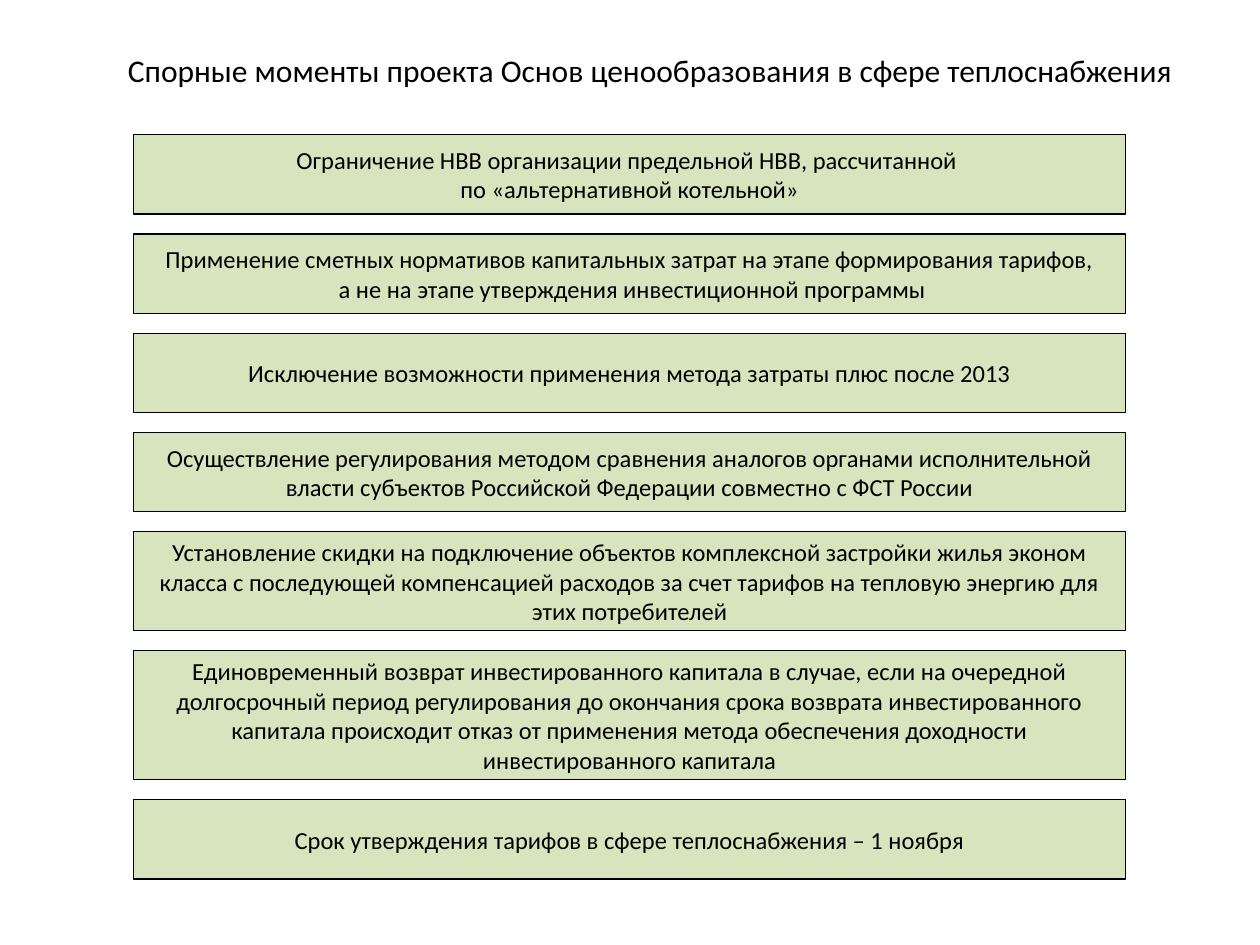
from dataclasses import dataclass

from pptx import Presentation
from pptx.dml.color import RGBColor
from pptx.enum.shapes import MSO_SHAPE
from pptx.enum.text import MSO_ANCHOR, MSO_AUTO_SIZE, PP_ALIGN
from pptx.util import Inches, Pt

RECT = MSO_SHAPE.RECTANGLE
MIDDLE, TOP = MSO_ANCHOR.MIDDLE, MSO_ANCHOR.TOP
CENTER = PP_ALIGN.CENTER
FIT_SHAPE = MSO_AUTO_SIZE.SHAPE_TO_FIT_TEXT

WIDTH, HEIGHT = 10, 7.5
UNIT = HEIGHT * 2.1 / 100
LEFT, FIRST_TOP = 1.06, 1.07
COLUMNS, GAP_ROWS = 50, 1


@dataclass(frozen=True)
class Theme:
    """Colours, font and type sizes of the slide."""
    font: str = "Calibri"
    ink: RGBColor = RGBColor(0x00, 0x00, 0x00)
    box: RGBColor = RGBColor(0xD7, 0xE4, 0xBD)
    title: int = 18
    body: int = 14
    line: float = 0.75


THEME = Theme()

TITLE = "Спорные моменты проекта Основ ценообразования в сфере теплоснабжения"
ISSUES = [
    (4, "Ограничение НВВ организации предельной НВВ, рассчитанной \n"
        "по «альтернативной котельной»"),
    (4, "Применение сметных нормативов капитальных затрат на этапе формирования тарифов,\n"
        " а не на этапе утверждения инвестиционной программы"),
    (4, "Исключение возможности применения метода затраты плюс после 2013"),
    (4, "Осуществление регулирования методом сравнения аналогов органами исполнительной "
        "власти субъектов Российской Федерации совместно с ФСТ России"),
    (5, "Установление скидки на подключение объектов комплексной застройки жилья эконом "
        "класса с последующей компенсацией расходов за счет тарифов на тепловую энергию для "
        "этих потребителей"),
    (6.5, "Единовременный возврат инвестированного капитала в случае, если на очередной "
          "долгосрочный период регулирования до окончания срока возврата инвестированного "
          "капитала происходит отказ от применения метода обеспечения доходности "
          "инвестированного капитала"),
    (4, "Срок утверждения тарифов в сфере теплоснабжения – 1 ноября"),
]


def write(s, text, size, anchor=MIDDLE, wrap=True):
    """Fill a shape with centred paragraphs, one for each line of text."""
    tf = s.text_frame
    tf.word_wrap = wrap
    tf.vertical_anchor = anchor
    for i, line in enumerate(text.split("\n")):
        p = tf.add_paragraph() if i else tf.paragraphs[0]
        p.alignment = CENTER
        r = p.add_run()
        r.text = line
        r.font.name = THEME.font
        r.font.size = Pt(size)
        r.font.color.rgb = THEME.ink


def add_title(sp, text):
    """Add the slide title on a single line."""
    s = sp.add_textbox(Inches(0.81), Inches(0.36), Inches(8.7), Inches(0.4))
    write(s, text, THEME.title, anchor=TOP, wrap=False)
    s.text_frame.auto_size = FIT_SHAPE


def add_issue(sp, top, rows, text):
    """Add one outlined box that is the given number of grid rows high."""
    s = sp.add_shape(RECT, Inches(LEFT), Inches(top),
                     Inches(COLUMNS * UNIT), Inches(rows * UNIT))
    s.shadow.inherit = False
    s.fill.solid()
    s.fill.fore_color.rgb = THEME.box
    s.line.color.rgb = THEME.ink
    s.line.width = Pt(THEME.line)
    write(s, text, THEME.body)


def add_issues(sp, issues):
    """Stack the issue boxes in one group with equal gaps."""
    group = sp.add_group_shape()
    top = FIRST_TOP
    for rows, text in issues:
        add_issue(group.shapes, top, rows, text)
        top += (rows + GAP_ROWS) * UNIT


def main():
    """Build and save the slide."""
    prs = Presentation()
    prs.slide_width, prs.slide_height = Inches(WIDTH), Inches(HEIGHT)
    sp = prs.slides.add_slide(prs.slide_layouts[6]).shapes
    add_title(sp, TITLE)
    add_issues(sp, ISSUES)
    prs.save("out.pptx")


if __name__ == "__main__":
    main()
